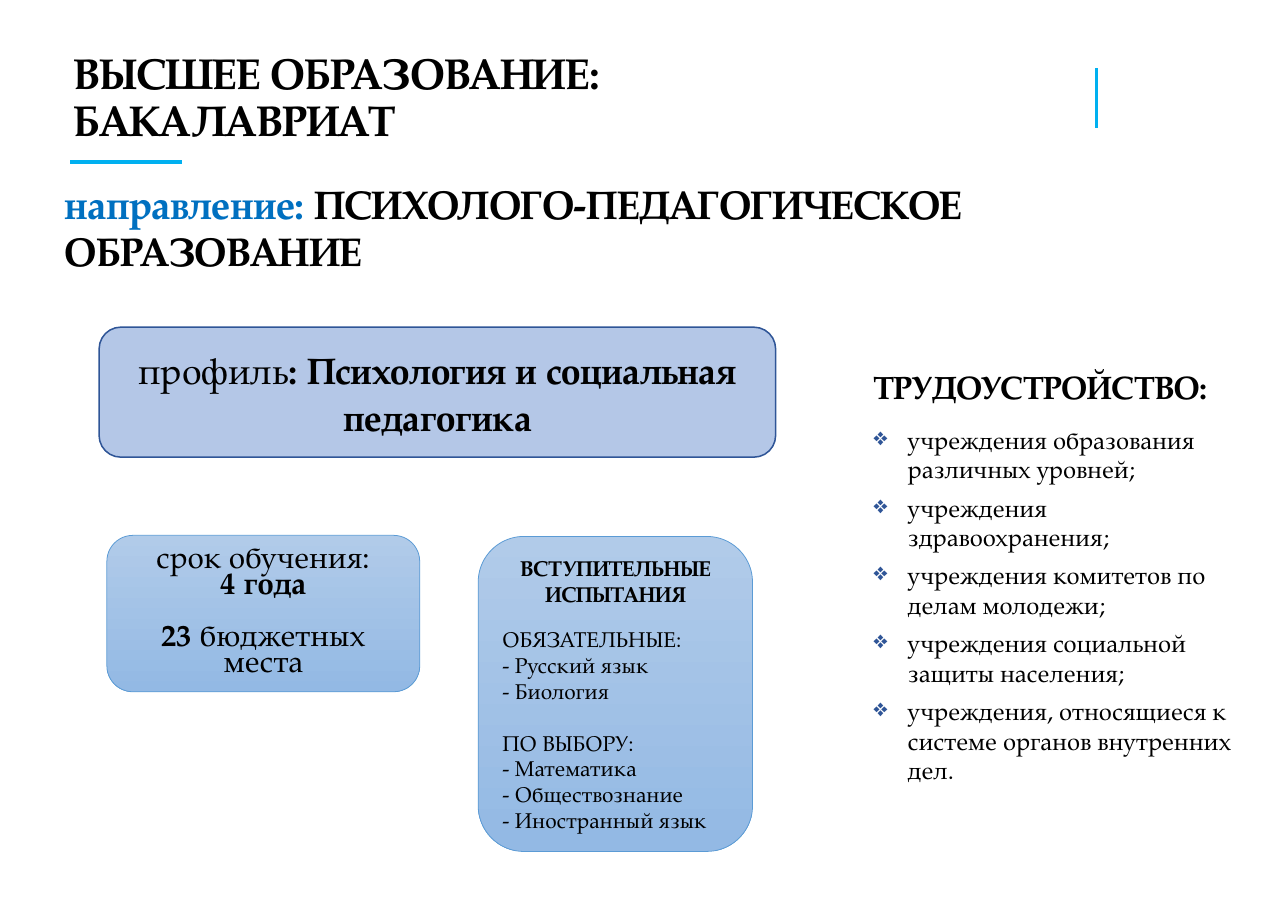
from dataclasses import dataclass
from typing import Optional

from lxml import etree
from pptx import Presentation
from pptx.dml.color import RGBColor
from pptx.enum.shapes import MSO_CONNECTOR, MSO_SHAPE
from pptx.enum.text import MSO_ANCHOR, PP_ALIGN
from pptx.oxml.ns import qn
from pptx.util import Emu, Pt

PX = 9144  # 100 px to the inch
FONT = "TeX Gyre Pagella"
BLACK, SKY, BLUE, NAVY = "000000", "00B0F0", "0070C0", "2F5597"
CENTER, LEFT = PP_ALIGN.CENTER, PP_ALIGN.LEFT
TOP, MIDDLE = MSO_ANCHOR.TOP, MSO_ANCHOR.MIDDLE
STRAIGHT, ROUNDED = MSO_CONNECTOR.STRAIGHT, MSO_SHAPE.ROUNDED_RECTANGLE


@dataclass
class Span:
    text: str
    bold: bool = False
    color: str = BLACK


@dataclass
class Para:
    spans: list[Span]
    size: float
    align: PP_ALIGN = LEFT
    spacing: float = 1.0
    before: float = 0
    after: float = 0
    bullet: str = ""


@dataclass
class Block:
    left: int
    top: int
    width: int
    height: int
    paras: list[Para]
    fills: tuple[str, ...] = ()
    line: Optional[str] = None
    line_width: float = 0
    anchor: MSO_ANCHOR = TOP


@dataclass
class Rule:
    start: tuple[int, int]
    end: tuple[int, int]
    width: float


def px(value: int) -> Emu:
    return Emu(value * PX)


def rgb(value: str) -> RGBColor:
    return RGBColor.from_string(value)


def text(content: str, size: float, bold: bool = False, **layout) -> Para:
    return Para([Span(content, bold)], size, **layout)


def add_bullet(para, mark: str) -> None:
    properties = para._p.get_or_add_pPr()
    properties.set("marL", str(px(31)))
    properties.set("indent", str(px(-31)))
    color = etree.SubElement(properties, qn("a:buClr"))
    etree.SubElement(color, qn("a:srgbClr"), val=NAVY)
    etree.SubElement(properties, qn("a:buChar"), char=mark)


def write_para(para, item: Para) -> None:
    if item.bullet:
        add_bullet(para, item.bullet)
    para.alignment = item.align
    para.line_spacing = item.spacing
    para.space_before, para.space_after = Pt(item.before), Pt(item.after)
    para.font.size, para.font.name = Pt(item.size), FONT
    for part in item.spans:
        if part.text == "\n":
            para.add_line_break()
            continue
        span = para.add_run()
        span.text = part.text
        span.font.name, span.font.size = FONT, Pt(item.size)
        span.font.bold = part.bold
        span.font.color.rgb = rgb(part.color)


def draw_block(page, block: Block) -> None:
    place = [px(v) for v in (block.left, block.top, block.width, block.height)]
    if block.fills:
        box = page.shapes.add_shape(ROUNDED, *place)
        box.shadow.inherit = False
        box.line.color.rgb = rgb(block.line)
        box.line.width = Pt(block.line_width)
        if len(block.fills) == 1:
            box.fill.solid()
            box.fill.fore_color.rgb = rgb(block.fills[0])
        else:
            box.fill.gradient()
            box.fill.gradient_angle = 270
            for stop, color in zip(box.fill.gradient_stops, block.fills):
                stop.color.rgb = rgb(color)
    else:
        box = page.shapes.add_textbox(*place)
    frame = box.text_frame
    frame.word_wrap = True
    frame.vertical_anchor = block.anchor
    for index, item in enumerate(block.paras):
        para = frame.add_paragraph() if index else frame.paragraphs[0]
        write_para(para, item)


def draw_rule(page, rule: Rule) -> None:
    ends = [px(v) for v in (*rule.start, *rule.end)]
    line = page.shapes.add_connector(STRAIGHT, *ends)
    line.line.color.rgb = rgb(SKY)
    line.line.width = Pt(rule.width)
    etree.SubElement(line._element.spPr, qn("a:effectLst"))


RULES = [Rule((64, 147), (165, 147), 3), Rule((995, 62), (995, 116), 2.25)]

GRADIENT = dict(fills=("B1CBE9", "93B9E4"), line="5B9BD5", line_width=0.5)
TERM = dict(size=20, align=CENTER, spacing=0.7)
JOBS = [
    "учреждения образования различных уровней;",
    "учреждения здравоохранения;",
    "учреждения комитетов по делам молодежи;",
    "учреждения социальной защиты населения;",
    "учреждения, относящиеся к системе органов внутренних дел.",
]
EXAMS = {
    "ОБЯЗАТЕЛЬНЫЕ:": (13, ["Русский язык", "Биология"]),
    "ПО ВЫБОРУ:": (17, ["Математика", "Обществознание", "Иностранный язык"]),
}

exam_paras = [text("ВСТУПИТЕЛЬНЫЕ ИСПЫТАНИЯ", 14, True, align=CENTER)]
for group, (gap, subjects) in EXAMS.items():
    exam_paras.append(text(group, 14, before=gap))
    exam_paras += [text(f"- {subject}", 14) for subject in subjects]

BLOCKS = [
    # Heading and field of study
    Block(57, 43, 879, 98, [Para([
        Span("ВЫСШЕЕ ОБРАЗОВАНИЕ:", True), Span("\n"), Span("БАКАЛАВРИАТ", True),
    ], 28, spacing=0.9)]),
    Block(49, 158, 990, 98, [Para([
        Span("направление: ", True, BLUE),
        Span("ПСИХОЛОГО-ПЕДАГОГИЧЕСКОЕ ОБРАЗОВАНИЕ", True),
    ], 26)]),
    # Profile
    Block(90, 297, 614, 118, [Para([
        Span("профиль"), Span(": Психология и социальная педагогика", True),
    ], 24, CENTER, 1.07)], ("B4C7E7",), NAVY, 1, MIDDLE),
    # Length of study and places
    Block(97, 486, 284, 142, [
        text("срок обучения:", **TERM),
        text("4 года", bold=True, **TERM),
        Para([Span("23 ", True), Span("бюджетных места")], before=17, **TERM),
    ], **GRADIENT),
    # Entrance exams
    Block(434, 487, 249, 286, exam_paras, **GRADIENT),
    # Employment
    Block(783, 329, 348, 436, [text("ТРУДОУСТРОЙСТВО:", 21, True)] + [
        text(job, 16, before=0 if index else 12, after=6, bullet="❖")
        for index, job in enumerate(JOBS)
    ]),
]


def main() -> None:
    deck = Presentation()
    deck.slide_width, deck.slide_height = px(1169), px(827)
    page = deck.slides.add_slide(deck.slide_layouts[6])
    for rule in RULES:
        draw_rule(page, rule)
    for block in BLOCKS:
        draw_block(page, block)
    deck.save("out.pptx")


if __name__ == "__main__":
    main()
